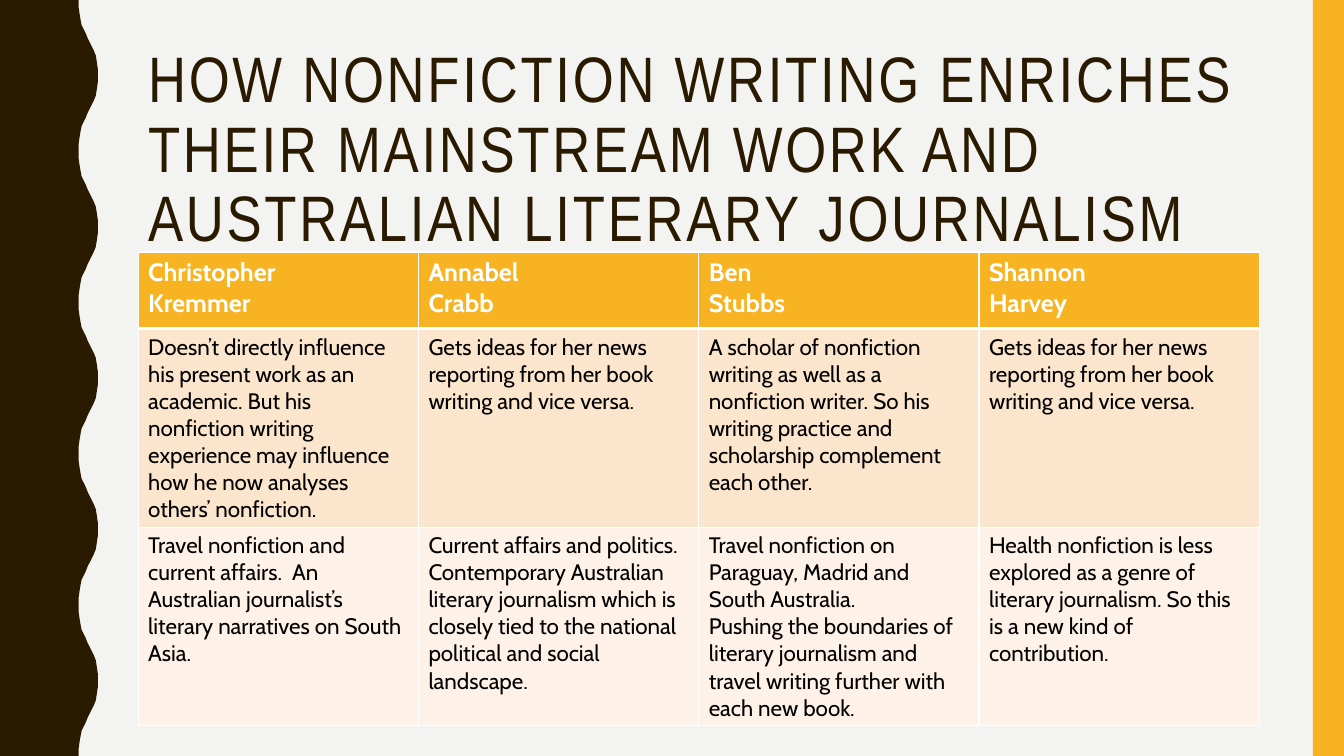
from lxml.etree import SubElement
from pptx import Presentation
from pptx.dml.color import RGBColor
from pptx.enum.shapes import MSO_SHAPE
from pptx.enum.text import MSO_ANCHOR
from pptx.oxml.ns import qn
from pptx.util import Inches, Pt

BROWN, GOLD, WHITE, BLACK = "2A1A00", "F8B323", "FFFFFF", "000000"
ROW_FILLS = [GOLD, "FCE5CD", "FEF2E8"]
ROW_HEIGHTS = [0.76, 1.97, 1.97]
COL_WIDTH = 2.78
TITLE = ("HOW NONFICTION WRITING ENRICHES THEIR MAINSTREAM WORK "
         "AND AUSTRALIAN LITERARY JOURNALISM")
NEWS_IDEAS = "Gets ideas for her news reporting from her book writing and vice versa."
ROWS = [
    ["Christopher\nKremmer", "Annabel\nCrabb", "Ben\nStubbs", "Shannon\nHarvey"],
    ["Doesn’t directly influence his present work as an academic. But his nonfiction "
     "writing experience may influence how he now analyses others’ nonfiction.",
     NEWS_IDEAS,
     "A scholar of nonfiction writing as well as a nonfiction writer. So his writing "
     "practice and scholarship complement each other.",
     NEWS_IDEAS],
    ["Travel nonfiction and current affairs.  An Australian journalist’s literary "
     "narratives on South Asia.",
     "Current affairs and politics.  Contemporary Australian literary journalism which "
     "is closely tied to the national political and social landscape.",
     "Travel nonfiction on Paraguay, Madrid and South Australia.\n"
     "Pushing the boundaries of literary journalism and travel writing further with "
     "each new book.",
     "Health nonfiction is less explored as a genre of literary journalism. So this is "
     "a new kind of contribution."],
]
WAVE_PERIOD = 1.5
HALF_WAVE = [
    (0.78, 0), (0.78, 0.07), (0.79, 0.14), (0.8, 0.2), (0.81, 0.25), (0.83, 0.29),
    (0.85, 0.33), (0.87, 0.38), (0.89, 0.42), (0.91, 0.46), (0.93, 0.5),
    (0.95, 0.55), (0.96, 0.61), (0.97, 0.68), (0.97, 0.75),
]


def rgb(color):
    """Return the colour for a hex string."""
    return RGBColor.from_string(color)


def paint(sp, color):
    """Give a shape a plain fill without line or shadow."""
    sp.shadow.inherit = False
    sp.fill.solid()
    sp.fill.fore_color.rgb = rgb(color)
    sp.line.fill.background()


def add_run(p, text, font, size, color, bold=False):
    """Add one formatted run to a paragraph."""
    r = p.add_run()
    r.text = text
    r.font.name, r.font.size, r.font.bold = font, Pt(size), bold
    r.font.color.rgb = rgb(color)
    return r


def add_wavy_band(s):
    """Draw the dark left band with its repeating wavy edge."""
    wave = HALF_WAVE + [(x, WAVE_PERIOD - y) for x, y in reversed(HALF_WAVE[1:-1])]
    edge = [(x, y + i * WAVE_PERIOD) for i in range(5) for x, y in wave]
    points = edge + [(0.78, 7.5), (0, 7.5)]
    fb = s.shapes.build_freeform(0, 0, scale=1.0)
    fb.add_line_segments([(Inches(x), Inches(y)) for x, y in points], close=True)
    paint(fb.convert_to_shape(), BROWN)


def add_side_bar(s):
    """Draw the gold bar on the right edge."""
    sp = s.shapes.add_shape(MSO_SHAPE.RECTANGLE, Inches(13.02), Inches(0),
                            Inches(0.31), Inches(7.5))
    paint(sp, GOLD)


def add_title(s):
    """Add the letter-spaced slide title."""
    sp = s.shapes.add_textbox(Inches(1.37), Inches(0.42), Inches(11.13), Inches(1.63))
    tf = sp.text_frame
    tf.word_wrap = True
    tf.vertical_anchor = MSO_ANCHOR.TOP
    p = tf.paragraphs[0]
    p.line_spacing = 0.9
    r = add_run(p, TITLE, "Arial Narrow", 45.9, BROWN)
    r.font._element.set("spc", "200")


def set_borders(cell, widths):
    """Put white borders on a cell, below its fill in schema order."""
    tcPr = cell._tc.get_or_add_tcPr()
    for i, (side, width) in enumerate(widths.items()):
        ln = SubElement(tcPr, qn(f"a:{side}"), w=str(Pt(width)))
        fill = SubElement(ln, qn("a:solidFill"))
        SubElement(fill, qn("a:srgbClr"), val=WHITE)
        tcPr.insert(i, ln)


def fill_cell(cell, text, row):
    """Write and style one table cell according to its row."""
    header = row == 0
    cell.fill.solid()
    cell.fill.fore_color.rgb = rgb(ROW_FILLS[row])
    set_borders(cell, {"lnL": 1, "lnR": 1, "lnT": 3 if row == 1 else 1,
                       "lnB": 3 if header else 1})
    tf = cell.text_frame
    for i, line in enumerate(text.split("\n")):
        p = tf.add_paragraph() if i else tf.paragraphs[0]
        add_run(p, line, "Cabin", 18 if header else 16,
                WHITE if header else BLACK, header)


def add_writer_table(s):
    """Add the table comparing the four writers."""
    table = s.shapes.add_table(len(ROWS), len(ROWS[0]), Inches(1.37), Inches(2.5),
                               Inches(4 * COL_WIDTH), Inches(sum(ROW_HEIGHTS))).table
    table.horz_banding = False
    for col in table.columns:
        col.width = Inches(COL_WIDTH)
    for i, texts in enumerate(ROWS):
        table.rows[i].height = Inches(ROW_HEIGHTS[i])
        for j, text in enumerate(texts):
            fill_cell(table.cell(i, j), text, i)


def main():
    """Build and save the slide."""
    prs = Presentation()
    prs.slide_width, prs.slide_height = Inches(13.33), Inches(7.5)
    s = prs.slides.add_slide(prs.slide_layouts[6])
    s.background.fill.solid()
    s.background.fill.fore_color.rgb = rgb("F3F3F2")
    add_wavy_band(s)
    add_side_bar(s)
    add_title(s)
    add_writer_table(s)
    prs.save("out.pptx")


if __name__ == "__main__":
    main()
